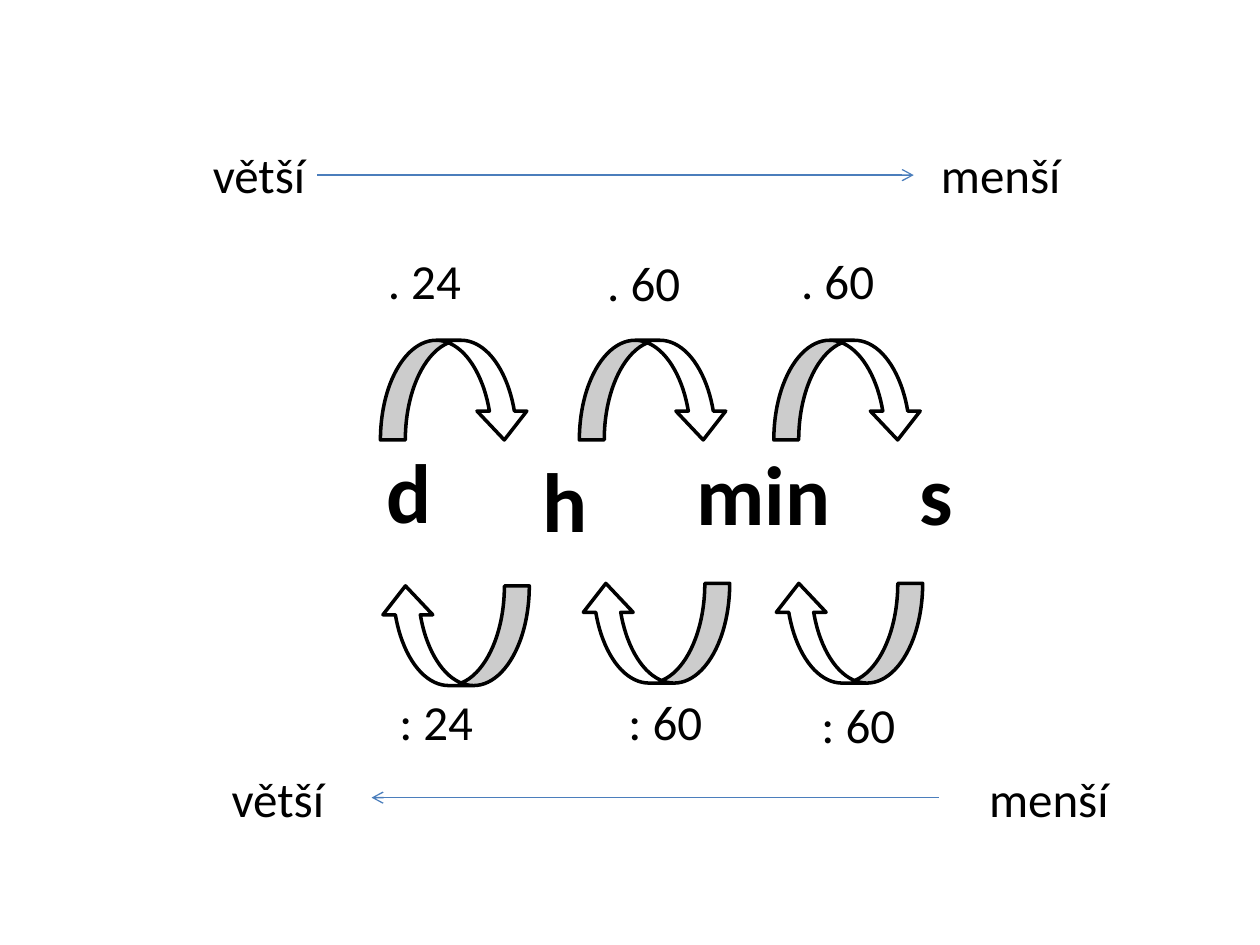
import pptx
import pptx.dml.color
import pptx.enum.shapes
import pptx.oxml
import pptx.oxml.ns
import pptx.util
from pptx.util import Cm

BLACK = pptx.dml.color.RGBColor(0x00, 0x00, 0x00)
WHITE = pptx.dml.color.RGBColor(0xFF, 0xFF, 0xFF)
BLUE = pptx.dml.color.RGBColor(0x4B, 0x7E, 0xBC)
LABEL_HEIGHT = 1.45
UNIT_HEIGHT = 2.31
ARROW_WIDTH, ARROW_HEIGHT = 3.0, 2.01


def add_label(slide, text, left, top, width, height=LABEL_HEIGHT, size=28, bold=False):
    """Place one line of black Calibri text."""
    label = slide.shapes.add_textbox(Cm(left), Cm(top), Cm(width), Cm(height))
    label.text_frame.word_wrap = True
    label.text_frame.margin_right = 0
    paragraph = label.text_frame.paragraphs[0]
    paragraph.text = text
    paragraph.font.name = "Calibri"
    paragraph.font.size = pptx.util.Pt(size)
    paragraph.font.bold = bold
    paragraph.font.color.rgb = BLACK


def add_curved_arrow(slide, left, top, rotation):
    """Place one curved conversion arrow."""
    arrow = slide.shapes.add_shape(
        pptx.enum.shapes.MSO_SHAPE.CURVED_DOWN_ARROW,
        Cm(left), Cm(top), Cm(ARROW_WIDTH), Cm(ARROW_HEIGHT))
    for index, value in enumerate((0.25, 0.5, 0.29)):
        arrow.adjustments[index] = value
    arrow.rotation = rotation
    arrow.shadow.inherit = False
    arrow.fill.solid()
    arrow.fill.fore_color.rgb = WHITE
    arrow.line.color.rgb = BLACK
    arrow.line.width = pptx.util.Pt(2)


def add_direction(slide, left, top, smaller_x, start_x, end_x, line_y):
    """Place the larger and smaller captions joined by a straight arrow."""
    add_label(slide, "větší", left, top, 2.39)
    add_label(slide, "menší", left + smaller_x, top, 2.95)
    direction = slide.shapes.add_connector(
        pptx.enum.shapes.MSO_CONNECTOR.STRAIGHT,
        Cm(left + start_x), Cm(top + line_y), Cm(left + end_x), Cm(top + line_y))
    direction.line.color.rgb = BLUE
    direction.line.width = pptx.util.Pt(0.75)
    tail = pptx.oxml.parse_xml(
        f'<a:tailEnd {pptx.oxml.ns.nsdecls("a")} type="arrow"/>')
    direction.line._get_or_add_ln().append(tail)
    direction._element.spPr.append(
        pptx.oxml.parse_xml(f'<a:effectLst {pptx.oxml.ns.nsdecls("a")}/>'))


def add_units(slide, left, top):
    """Place the row of time units."""
    for unit, x, y, width in (("d", 0, 0, 1.42), ("h", 3.15, 0.18, 1.42),
                              ("min", 6.25, 0.03, 3.23), ("s", 10.74, 0.03, 1.19)):
        add_label(slide, unit, left + x, top + y, width, UNIT_HEIGHT, 48, True)


def add_conversions(slide, left, top, sign, rotation, label_width, steps):
    """Place a row of curved arrows, each with its factor."""
    for factor, arrow_x, arrow_y, label_x, label_y in steps:
        add_curved_arrow(slide, left + arrow_x, top + arrow_y, rotation)
        add_label(slide, f"{sign} {factor}", left + label_x, top + label_y, label_width)


def main():
    """Build the slide on converting units of time."""
    presentation = pptx.Presentation()
    presentation.slide_width, presentation.slide_height = Cm(25.4), Cm(19.05)
    slide = presentation.slides.add_slide(presentation.slide_layouts[6])
    add_units(slide, 7.54, 8.74)
    add_conversions(slide, 7.57, 4.93, ".", 0, 2.44, (
        (24, 0.1, 1.93, 0, 0), (60, 4.11, 1.93, 4.42, 0.03), (60, 8.03, 1.93, 8.33, 0)))
    add_conversions(slide, 7.67, 11.76, ":", 180, 2.03, (
        (24, 0, 0.05, 0.13, 2.06), (60, 4.04, 0, 4.75, 2.06), (60, 7.93, 0, 8.64, 2.11)))
    add_direction(slide, 4.04, 2.79, 14.68, 2.36, 14.38, 0.74)
    add_direction(slide, 4.42, 15.37, 15.27, 14.5, 3.07, 0.71)
    presentation.save("out.pptx")


if __name__ == "__main__":
    main()
